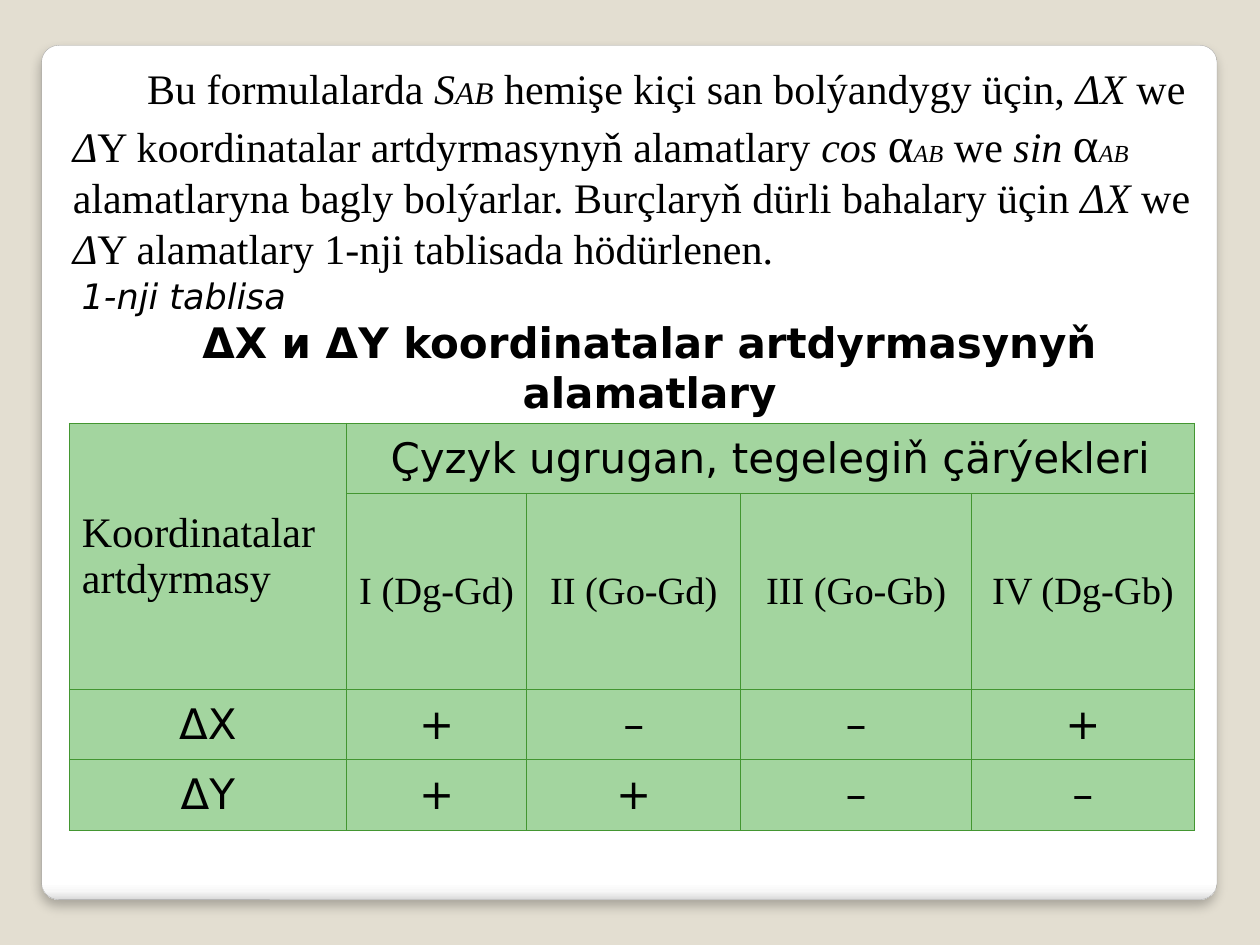
from lxml import etree
from pptx import Presentation
from pptx import util as u
from pptx.dml.color import RGBColor
from pptx.enum import shapes, text
from pptx.oxml import parse_xml
from pptx.oxml.ns import nsdecls, qn

THEME = {
    "bg": "E3DED1", "ink": "000000", "cell": "A3D59F", "border": "439631",
    "card_line": "A4A4A4", "serif": "Times New Roman", "sans": "DejaVu Sans",
    "body": 24, "quarter": 22, "caption": 20, "subscript": 18,
    "alpha": 28, "small_subscript": 14,
}
CARD_STOPS = [(0, "FFFFFF"), (98, "FFFFFF"), (99, "F7F7F7"), (100, "DADADA")]

IT = {"italic": True}
ALPHA = {"size": THEME["alpha"]}
SUB = {"size": THEME["small_subscript"], "italic": True}
INTRO = [
    ("Bu formulalarda ", {}), ("S", IT),
    ("AB", {"size": THEME["subscript"], "italic": True}),
    (" hemişe kiçi san bolýandygy üçin, ", {}), ("ΔX ", IT), ("we ", {}),
    ("Δ", IT), ("Y koordinatalar artdyrmasynyň alamatlary ", {}),
    ("cos ", IT), ("α", ALPHA), ("AB", SUB), (" we ", {}),
    ("sin ", IT), ("α", ALPHA), ("AB", SUB),
    (" alamatlaryna bagly bolýarlar. Burçlaryň dürli bahalary üçin ", {}),
    ("ΔX ", IT), ("we ", {}), ("Δ", IT),
    ("Y alamatlary 1-nji tablisada hödürlenen.", {}),
]
CAPTION = "1-nji tablisa"
HEADING = "ΔX и ΔY koordinatalar artdyrmasynyň alamatlary"
ROW_HEAD = "Koordinatalar artdyrmasy"
COL_HEAD = "Çyzyk ugrugan, tegelegiň çärýekleri"
QUARTERS = ["I (Dg-Gd)", "II (Go-Gd)", "III (Go-Gb)", "IV (Dg-Gb)"]
SIGNS = [["ΔX", "+", "–", "–", "+"], ["ΔY", "+", "+", "–", "–"]]
COLS = [2.2, 1.43, 1.7, 1.83, 1.77]
ROWS = [0.56, 1.55, 0.56, 0.56]


def rgb(name):
    return RGBColor.from_string(THEME[name])


def add_text(p, content, size=THEME["body"], font=THEME["serif"],
             bold=False, italic=False, align=None):
    if align is not None:
        p.alignment = align
    r = p.add_run()
    r.text = content
    r.font.size, r.font.name = u.Pt(size), font
    r.font.bold, r.font.italic = bold, italic
    r.font.color.rgb = rgb("ink")


def add_box(s, *at):
    tf = s.shapes.add_textbox(*map(u.Inches, at)).text_frame
    tf.word_wrap = True
    return tf


def add_card(s):
    at = map(u.Inches, (0.33, 0.36, 9.33, 6.78))
    sp = s.shapes.add_shape(shapes.MSO_SHAPE.ROUNDED_RECTANGLE, *at)
    sp.adjustments[0] = 0.02
    sp.fill.gradient()
    sp.fill.gradient_angle = 270
    stops = sp._element.spPr.find(".//" + qn("a:gsLst"))
    for stop in list(stops):
        stops.remove(stop)
    for pos, color in CARD_STOPS:
        gs = etree.SubElement(stops, qn("a:gs"), pos=str(pos * 1000))
        etree.SubElement(gs, qn("a:srgbClr"), val=color)
    sp.line.color.rgb = rgb("card_line")
    sp.line.width = u.Pt(0.16)
    sp._element.spPr.append(parse_xml(
        f'<a:effectLst {nsdecls("a")}><a:outerShdw blurRad="{u.Pt(6)}" '
        f'dist="{u.Pt(4)}" dir="5400000" rotWithShape="0"><a:srgbClr val="000000">'
        '<a:alpha val="25000"/></a:srgbClr></a:outerShdw></a:effectLst>'))


def format_cell(cell):
    tc_pr = cell._tc.get_or_add_tcPr()
    for side in ("lnL", "lnR", "lnT", "lnB"):
        tc_pr.append(parse_xml(
            f'<a:{side} {nsdecls("a")} w="{u.Pt(0.75)}"><a:solidFill>'
            f'<a:srgbClr val="{THEME["border"]}"/></a:solidFill></a:{side}>'))
    cell.fill.solid()
    cell.fill.fore_color.rgb = rgb("cell")
    cell.vertical_anchor = text.MSO_ANCHOR.MIDDLE


def add_sign_table(s):
    at = map(u.Inches, (0.55, 3.36, sum(COLS), sum(ROWS)))
    table = s.shapes.add_table(len(ROWS), len(COLS), *at).table
    for col, width in zip(table.columns, COLS):
        col.width = u.Inches(width)
    for row, height in zip(table.rows, ROWS):
        row.height = u.Inches(height)
    for cell in table.iter_cells():
        format_cell(cell)
    table.cell(0, 0).merge(table.cell(1, 0))
    table.cell(0, 1).merge(table.cell(0, 4))

    def put(row, col, content, **fmt):
        add_text(table.cell(row, col).text_frame.paragraphs[0], content, **fmt)

    center = text.PP_ALIGN.CENTER
    put(0, 0, ROW_HEAD)
    put(0, 1, COL_HEAD, font=THEME["sans"], align=center)
    for col, quarter in enumerate(QUARTERS, 1):
        put(1, col, quarter, size=THEME["quarter"], align=center)
    for row, signs in enumerate(SIGNS, 2):
        for col, sign in enumerate(signs):
            put(row, col, sign, font=THEME["sans"], align=center)


def main():
    prs = Presentation()
    prs.slide_width, prs.slide_height = u.Inches(10), u.Inches(7.5)
    s = prs.slides.add_slide(prs.slide_layouts[6])
    s.background.fill.solid()
    s.background.fill.fore_color.rgb = rgb("bg")
    add_card(s)
    add_sign_table(s)

    tf = add_box(s, 0.55, 2.13, 9.21, 1.2)
    add_text(tf.paragraphs[0], CAPTION, size=THEME["caption"],
             font=THEME["sans"], italic=True)
    add_text(tf.add_paragraph(), HEADING, font=THEME["sans"], bold=True,
             align=text.PP_ALIGN.CENTER)

    tf = add_box(s, 0.48, 0.44, 9.13, 1.78)
    tf.vertical_anchor = text.MSO_ANCHOR.MIDDLE
    p = tf.paragraphs[0]
    p._p.get_or_add_pPr().set("indent", str(u.Inches(0.59)))
    for content, fmt in INTRO:
        add_text(p, content, **fmt)

    prs.save("out.pptx")


if __name__ == "__main__":
    main()
